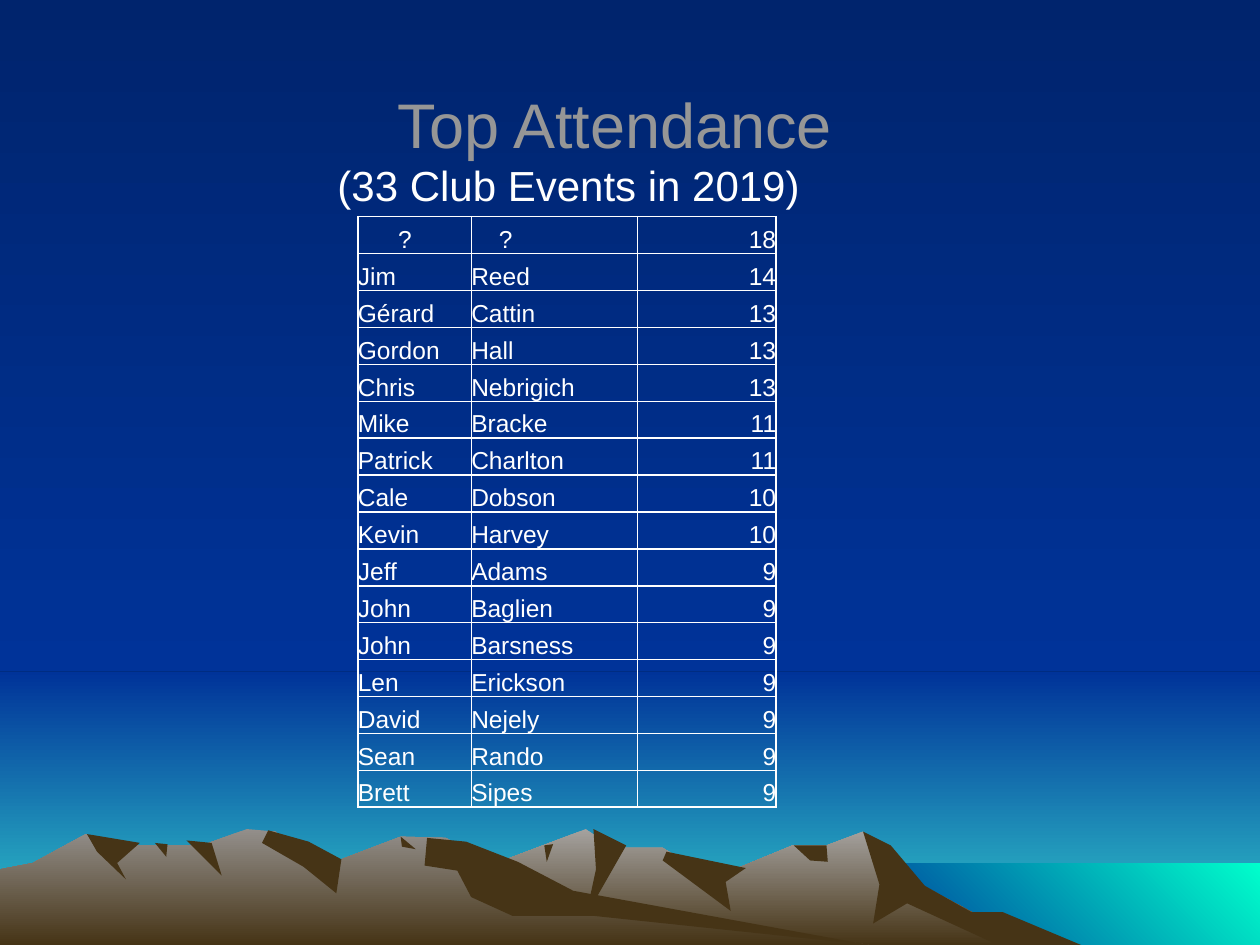
"""Build the Top Attendance slide: a mountain backdrop, two headings and a ranking table."""
from dataclasses import dataclass

from lxml.etree import SubElement
from pptx import Presentation
from pptx.dml.color import RGBColor
from pptx.dml.fill import FillFormat
from pptx.enum.shapes import MSO_SHAPE
from pptx.enum.text import MSO_ANCHOR, PP_ALIGN
from pptx.oxml.ns import qn
from pptx.slide import Slide
from pptx.table import _Cell
from pptx.text.text import _Paragraph
from pptx.util import Emu, Pt

PX = 9144
WIDTH, HEIGHT, HORIZON = 1000, 750, 533
FONT = "Arial"
DOWN, UP_RIGHT = 270, 45
COLORS = {
    "midnight": "001847", "navy": "00246D", "blue": "003399", "teal": "33CCCC",
    "aqua": "00FFCC", "pale_rock": "A5A29F", "rock": "938F8B", "earth": "463416",
    "white": "FFFFFF", "gray": "969696",
}


@dataclass(frozen=True)
class Band:
    left: int
    top: int
    width: int
    height: int
    colors: tuple[str, ...]
    angle: int = DOWN


@dataclass(frozen=True)
class Ridge:
    outline: list[tuple[int, int]]
    colors: tuple[str, ...] = ("earth",)


@dataclass(frozen=True)
class Heading:
    text: str
    left: int
    top: int
    width: int
    height: int
    size: int
    color: str
    align: PP_ALIGN
    top_inset: int


@dataclass(frozen=True)
class Attendee:
    first: str
    last: str


BANDS = [
    Band(0, HORIZON, WIDTH, HEIGHT - HORIZON, ("blue", "teal")),
    Band(0, 0, WIDTH, HORIZON, ("navy", "blue")),
    Band(683, 685, WIDTH - 683, HEIGHT - 685, ("blue", "aqua"), UP_RIGHT),
]

RIDGES = [
    Ridge([(258, HEIGHT), (327, 709), (394, 685), (465, 658), (486, 673), (526, 673),
           (566, 697), (629, 671), (656, 671), (685, 660), (723, 698), (820, HEIGHT)],
          ("pale_rock", "earth")),
    Ridge([(685, 660), (707, 671), (734, 703), (771, 724), (796, 724), (858, HEIGHT),
           (792, HEIGHT), (720, 717), (693, 733), (698, 702)]),
    Ridge([(471, 658), (497, 671), (465, 727), (473, 690)]),
    Ridge([(529, 676), (592, 689), (576, 700), (580, 723), (526, 683)]),
    Ridge([(630, 671), (656, 671), (657, 684), (643, 683)]),
    Ridge([(432, 671), (439, 670), (434, 684)]),
    Ridge([(0, HEIGHT), (0, 690), (26, 685), (68, 662), (94, 671), (132, 671), (160, 671),
           (196, 658), (219, 660), (236, 681), (271, 682), (318, 664), (354, 665),
           (432, 712), (690, HEIGHT)], ("rock", "earth")),
    Ridge([(213, 659), (245, 668), (271, 682), (267, 709), (241, 688), (208, 669)]),
    Ridge([(339, 665), (370, 668), (411, 684), (455, 707), (690, HEIGHT), (472, 727),
           (407, 727), (374, 712), (363, 691), (337, 687)]),
    Ridge([(318, 664), (330, 674), (319, 672)]),
    Ridge([(148, 667), (168, 669), (176, 695)]),
    Ridge([(123, 669), (133, 670), (132, 680)]),
    Ridge([(69, 662), (111, 669), (93, 685), (100, 698), (77, 676)]),
]

SUBTITLE = Heading("(33 Club Events in 2019)", 258, 120, 391, 50, 24, "white", PP_ALIGN.LEFT, 7)
TITLE = Heading("Top Attendance", 233, 58, 510, 57, 36, "gray", PP_ALIGN.CENTER, 10)

COLUMN_WIDTHS = (90, 132, 110)
UNKNOWN_INSETS = (32, 22, 0)
ATTENDEES_BY_EVENTS = {
    18: [Attendee("?", "?")],
    14: [Attendee("Jim", "Reed")],
    13: [Attendee("Gérard", "Cattin"), Attendee("Gordon", "Hall"),
         Attendee("Chris", "Nebrigich")],
    11: [Attendee("Mike", "Bracke"), Attendee("Patrick", "Charlton")],
    10: [Attendee("Cale", "Dobson"), Attendee("Kevin", "Harvey")],
    9: [Attendee("Jeff", "Adams"), Attendee("John", "Baglien"), Attendee("John", "Barsness"),
        Attendee("Len", "Erickson"), Attendee("David", "Nejely"), Attendee("Sean", "Rando"),
        Attendee("Brett", "Sipes")],
}


def px(*lengths: int) -> list[Emu]:
    return [Emu(length * PX) for length in lengths]


def rgb(name: str) -> RGBColor:
    return RGBColor.from_string(COLORS[name])


def paint(fill: FillFormat, colors: tuple[str, ...], angle: int = DOWN) -> None:
    if len(colors) == 1:
        fill.solid()
        fill.fore_color.rgb = rgb(colors[0])
        return
    fill.gradient()
    fill.gradient_angle = angle
    for position, (stop, color) in enumerate(zip(fill.gradient_stops, colors)):
        stop.position = position
        stop.color.rgb = rgb(color)


def draw_band(slide: Slide, band: Band) -> None:
    box = px(band.left, band.top, band.width, band.height)
    shape = slide.shapes.add_shape(MSO_SHAPE.RECTANGLE, *box)
    paint(shape.fill, band.colors, band.angle)
    shape.line.fill.background()
    shape.shadow.inherit = False


def draw_ridge(slide: Slide, ridge: Ridge) -> None:
    builder = slide.shapes.build_freeform(*ridge.outline[0], scale=PX)
    builder.add_line_segments(ridge.outline[1:], close=True)
    shape = builder.convert_to_shape()
    paint(shape.fill, ridge.colors)
    shape.line.fill.background()
    shape.shadow.inherit = False


def write(paragraph: _Paragraph, text: str, size: int, color: str, align: PP_ALIGN) -> None:
    paragraph.text = text
    paragraph.alignment = align
    font = paragraph.runs[0].font
    font.name, font.size, font.color.rgb = FONT, Pt(size), rgb(color)


def draw_heading(slide: Slide, heading: Heading) -> None:
    box = px(heading.left, heading.top, heading.width, heading.height)
    frame = slide.shapes.add_textbox(*box).text_frame
    frame.word_wrap = False
    frame.vertical_anchor = MSO_ANCHOR.TOP
    frame.margin_top = Emu(heading.top_inset * PX)
    write(frame.paragraphs[0], heading.text, heading.size, heading.color, heading.align)


def border(cell: _Cell) -> None:
    properties = cell._tc.get_or_add_tcPr()
    for side in ("a:lnL", "a:lnR", "a:lnT", "a:lnB"):
        line = SubElement(properties, qn(side), w=str(Pt(1)))
        SubElement(SubElement(line, qn("a:solidFill")), qn("a:srgbClr"), val=COLORS["white"])


def draw_ranking(slide: Slide, left: int, top: int, height: int) -> None:
    entries = [(attendee.first, attendee.last, events)
               for events, group in ATTENDEES_BY_EVENTS.items() for attendee in group]
    box = px(left, top, sum(COLUMN_WIDTHS), height)
    ranking = slide.shapes.add_table(len(entries), len(COLUMN_WIDTHS), *box).table
    ranking.first_row = ranking.horz_banding = False
    for column, width in zip(ranking.columns, px(*COLUMN_WIDTHS)):
        column.width = width
    for row, entry in zip(ranking.rows, entries):
        for cell, value, inset in zip(row.cells, entry, px(*UNKNOWN_INSETS)):
            border(cell)
            cell.fill.background()
            cell.vertical_anchor = MSO_ANCHOR.BOTTOM
            cell.margin_left = inset if value == "?" else 0
            cell.margin_right = cell.margin_top = cell.margin_bottom = 0
            align = PP_ALIGN.RIGHT if isinstance(value, int) else PP_ALIGN.LEFT
            write(cell.text_frame.paragraphs[0], str(value), 14, "white", align)


def main() -> None:
    deck = Presentation()
    deck.slide_width, deck.slide_height = px(WIDTH, HEIGHT)
    slide = deck.slides.add_slide(deck.slide_layouts[6])
    paint(slide.background.fill, ("midnight", "blue"))
    for band in BANDS:
        draw_band(slide, band)
    for ridge in RIDGES:
        draw_ridge(slide, ridge)
    draw_heading(slide, SUBTITLE)
    draw_ranking(slide, 284, 172, 469)
    draw_heading(slide, TITLE)
    deck.save("out.pptx")


if __name__ == "__main__":
    main()
